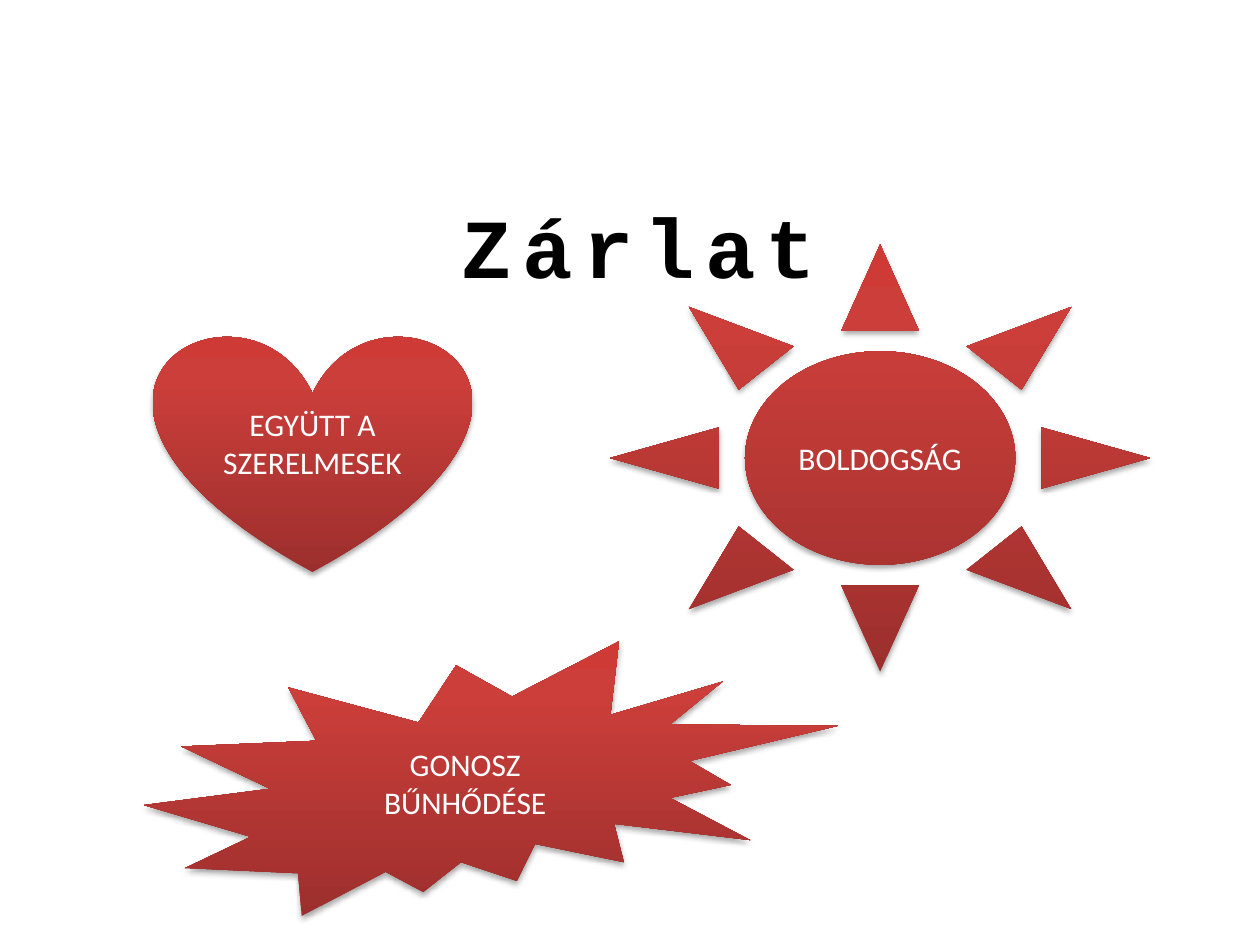
"""Builds the closing slide: a title above three glossy red shapes."""
from copy import deepcopy

from lxml.etree import SubElement
from pptx import Presentation
from pptx.dml.color import RGBColor
from pptx.enum.shapes import MSO_SHAPE as Shape
from pptx.enum.text import MSO_ANCHOR as Anchor, PP_ALIGN as Align
from pptx.oxml.ns import qn
from pptx.util import Inches, Pt

COLORS = {"title": "000000", "label": "FFFFFF", "shadow": "000000",
          "dark": "9C2F2D", "mid": "CB3E3A", "light": "CE3B37"}
GLOSS = [(0, "dark"), (0.8, "mid"), (1, "light")]
SHAPES = [
    (Shape.HEART, (1.22, 2.65, 2.52, 1.89), "EGYÜTT A SZERELMESEK"),
    (Shape.SUN, (4.84, 1.94, 4.29, 3.39), "BOLDOGSÁG"),
    (Shape.EXPLOSION2, (1.14, 5.09, 5.51, 2.18), "GONOSZ BŰNHŐDÉSE"),
]


def write(box, text, *, color, font="Calibri", size=18, bold=False, spacing=0):
    """Put one centred, formatted paragraph in the middle of a box."""
    frame = box.text_frame
    frame.word_wrap = True
    frame.vertical_anchor = Anchor.MIDDLE
    para = frame.paragraphs[0]
    para.alignment = Align.CENTER
    span = para.add_run()
    span.text = text
    span.font.name = font
    span.font.size = Pt(size)
    span.font.bold = bold
    span.font.color.rgb = RGBColor.from_string(COLORS[color])
    if spacing:
        span.font._element.set("spc", str(spacing * 100))


def add_gloss(shape):
    """Fill a shape with the three-stop gradient, dark at the bottom."""
    fill = shape.fill
    fill.gradient()
    fill.gradient_angle = 90
    stop_list = shape._element.spPr.find(qn("a:gradFill")).find(qn("a:gsLst"))
    stop_list.append(deepcopy(stop_list[-1]))
    for stop, (position, color) in zip(fill.gradient_stops, GLOSS):
        stop.position = position
        stop.color.rgb = RGBColor.from_string(COLORS[color])


def add_shadow(shape):
    """Give a shape a soft shadow that falls straight down."""
    shape.shadow.inherit = False
    effects = shape._element.spPr.find(qn("a:effectLst"))
    shadow = SubElement(effects, qn("a:outerShdw"), blurRad=str(Pt(3.1)),
                        dist=str(Pt(1.8)), dir="5400000", rotWithShape="0")
    color = SubElement(shadow, qn("a:srgbClr"), val=COLORS["shadow"])
    SubElement(color, qn("a:alpha"), val="35000")


def add_glossy_shape(page, kind, bounds, text):
    """Add a labelled shape with gradient and shadow but no outline."""
    shape = page.shapes.add_shape(kind, *map(Inches, bounds))
    add_gloss(shape)
    shape.line.fill.background()
    add_shadow(shape)
    write(shape, text, color="label")


def add_title(page, text):
    """Place and format the title placeholder."""
    title = page.shapes.title
    title.left, title.top, title.width, title.height = map(
        Inches, (0.43, 0.52, 9.29, 2.84))
    write(title, text, color="title", font="Courier New", size=48,
          bold=True, spacing=6)


def main():
    """Build and save the deck."""
    deck = Presentation()
    deck.slide_width, deck.slide_height = Inches(10), Inches(7.5)
    page = deck.slides.add_slide(deck.slide_layouts[5])
    add_title(page, "Zárlat")
    for kind, bounds, text in SHAPES:
        add_glossy_shape(page, kind, bounds, text)
    deck.save("out.pptx")


if __name__ == "__main__":
    main()
